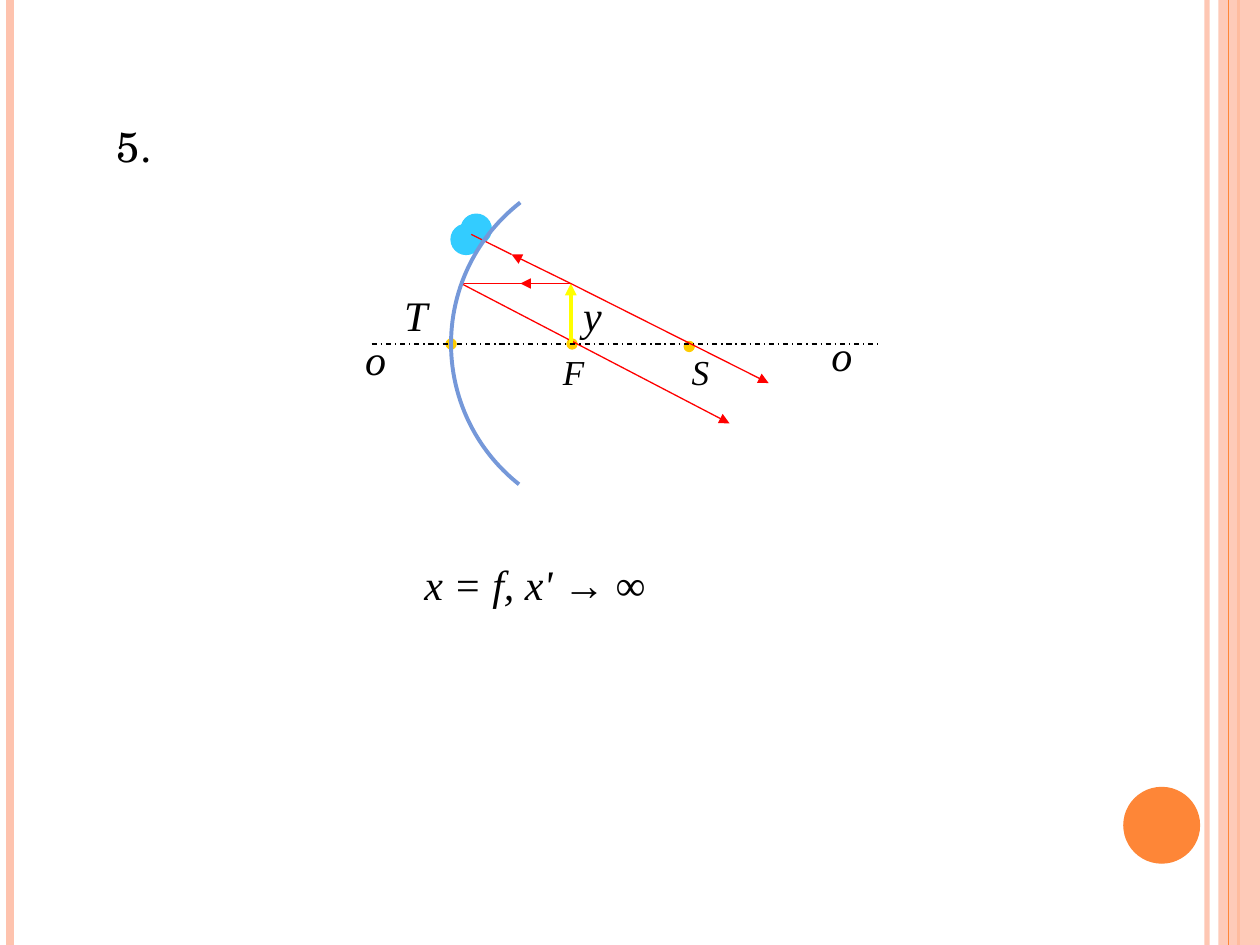
from typing import NamedTuple, Optional

from lxml import etree
from pptx import Presentation
from pptx.dml.color import RGBColor
from pptx.enum.dml import MSO_LINE
from pptx.enum.shapes import MSO_CONNECTOR, MSO_SHAPE
from pptx.enum.text import MSO_ANCHOR, MSO_AUTO_SIZE
from pptx.oxml.ns import qn
from pptx.util import Inches, Pt

STRAIGHT = MSO_CONNECTOR.STRAIGHT
RECT, OVAL, ARC = MSO_SHAPE.RECTANGLE, MSO_SHAPE.OVAL, MSO_SHAPE.ARC
DASH_DOT = MSO_LINE.DASH_DOT
TOP, MIDDLE = MSO_ANCHOR.TOP, MSO_ANCHOR.MIDDLE
GROW = MSO_AUTO_SIZE.SHAPE_TO_FIT_TEXT

PEACH = RGBColor(0xFE, 0xC3, 0xAE)
ORANGE = RGBColor(0xFE, 0x86, 0x37)
GOLD = RGBColor(0xFF, 0xCC, 0x00)
RED = RGBColor(0xFF, 0x00, 0x00)
YELLOW = RGBColor(0xFF, 0xFF, 0x00)
CYAN = RGBColor(0x33, 0xCC, 0xFF)
BLUE = RGBColor(0x75, 0x98, 0xD9)
BLACK = RGBColor(0x00, 0x00, 0x00)

SERIF, SCHOOL = "Times New Roman", "TeX Gyre Schola"
SLIDE_W, SLIDE_H = 10, 7.5
AXIS_Y = 2.73
MIRROR_X, CENTRE_X = 3.58, 5.0
OBJECT_TOP = (4.53, 2.25)
MIRROR_HIT = (3.66, 2.25)


class Line(NamedTuple):
    start: tuple[float, float]
    end: tuple[float, float]
    color: RGBColor
    width: float = 0.75
    arrow: bool = False
    dash: Optional[MSO_LINE] = None
    alpha: int = 100


class Disc(NamedTuple):
    x: float
    y: float
    size: float
    color: RGBColor


class Label(NamedTuple):
    text: str
    x: float
    y: float
    w: float
    h: float = 0.5
    size: int = 24
    font: str = SERIF
    italic: bool = True
    anchor: MSO_ANCHOR = TOP


def vertical(x: float, color: RGBColor, width: float, alpha: int = 100) -> Line:
    return Line((x, 0), (x, SLIDE_H), color, width, alpha=alpha)


BORDERS = [vertical(9.58, PEACH, 3, 93), vertical(0.08, PEACH, 4.5),
           vertical(9.83, ORANGE, 1.5)]
INNER_BORDER = vertical(9.75, ORANGE, 0.75)
CORNER_DISC = Disc(9.22, 6.55, 0.6, ORANGE)

POINTS = [Disc(MIRROR_X, AXIS_Y, 0.08, GOLD), Disc(4.54, AXIS_Y, 0.08, GOLD),
          Disc(5.47, 2.75, 0.08, GOLD)]
CLOUD = [Disc(3.7, 1.9, 0.24, CYAN), Disc(3.78, 1.82, 0.24, CYAN)]
LINES = [
    Line(OBJECT_TOP, (4.13, 2.25), RED, arrow=True),
    Line((4.21, 2.25), MIRROR_HIT, RED),
    Line(MIRROR_HIT, (5.79, 3.36), RED, arrow=True),
    Line((4.53, 2.72), OBJECT_TOP, YELLOW, 2.25, arrow=True),
    Line((2.95, AXIS_Y), (6.97, AXIS_Y), BLACK, dash=DASH_DOT),
    Line(OBJECT_TOP, (6.1, 3.04), RED, arrow=True),
    Line(OBJECT_TOP, (4.06, 2.02), RED, arrow=True),
    Line((4.06, 2.02), (3.74, 1.86), RED),
]
LABELS = [
    Label("o", 2.8, 2.6, 0.37),
    Label("o", 6.5, 2.57, 0.37),
    Label("F", 4.37, AXIS_Y, 0.37, 0.43, 20),
    Label("S", 5.39, AXIS_Y, 0.34, 0.43, 20),
    Label("T", 3.11, 2.25, 0.39),
    Label("y", 4.53, 2.25, 0.35),
    Label("5.", 0.83, 0.91, 0.57, font=SCHOOL, italic=False),
]
FORMULA = Label("x = f, x' ", 3.27, 4.38, 2.1, anchor=MIDDLE)


def set_alpha(sp_pr, percent: int) -> None:
    color = next(sp_pr.iter(qn("a:srgbClr")))
    etree.SubElement(color, qn("a:alpha")).set("val", str(percent * 1000))


def add_line(s, line: Line) -> None:
    ends = [Inches(v) for v in (*line.start, *line.end)]
    cx = s.shapes.add_connector(STRAIGHT, *ends)
    cx.line.color.rgb = line.color
    cx.line.width = Pt(line.width)
    if line.dash is not None:
        cx.line.dash_style = line.dash
    sp_pr = cx._element.spPr
    if line.alpha < 100:
        set_alpha(sp_pr, line.alpha)
    if line.arrow:
        ln = sp_pr.find(qn("a:ln"))
        etree.SubElement(ln, qn("a:tailEnd")).set("type", "triangle")
    etree.SubElement(sp_pr, qn("a:effectLst"))


def add_shape(s, kind: MSO_SHAPE, x: float, y: float, w: float, h: float):
    sp = s.shapes.add_shape(kind, Inches(x), Inches(y), Inches(w), Inches(h))
    sp.shadow.inherit = False
    return sp


def add_disc(s, disc: Disc) -> None:
    half = disc.size / 2
    sp = add_shape(s, OVAL, disc.x - half, disc.y - half, disc.size, disc.size)
    sp.fill.solid()
    sp.fill.fore_color.rgb = disc.color
    sp.line.color.rgb = disc.color
    sp.line.width = Pt(0.75)


def add_band(s) -> None:
    sp = add_shape(s, RECT, 9.67, 0, 0.33, SLIDE_H)
    sp.fill.solid()
    sp.fill.fore_color.rgb = PEACH
    sp.line.fill.background()
    set_alpha(sp._element.spPr, 87)


def add_mirror(s) -> None:
    radius = CENTRE_X - MIRROR_X
    sp = add_shape(s, ARC, MIRROR_X, AXIS_Y - radius, 2 * radius, 2 * radius)
    for i, degrees in enumerate((128.3, 232.2)):
        sp.adjustments[i] = degrees * 0.6  # 60000ths of a degree over 100000
    sp.fill.background()
    sp.line.color.rgb = BLUE
    sp.line.width = Pt(2.25)


def format_run(r, label: Label, italic: bool) -> None:
    r.font.name = label.font
    r.font.size = Pt(label.size)
    r.font.italic = italic
    r.font.color.rgb = BLACK


def add_label(s, label: Label):
    box = [Inches(v) for v in (label.x, label.y, label.w, label.h)]
    tf = s.shapes.add_textbox(*box).text_frame
    tf.text = label.text
    tf.word_wrap = False
    tf.auto_size = GROW
    tf.vertical_anchor = label.anchor
    p = tf.paragraphs[0]
    format_run(p.runs[0], label, label.italic)
    return p


def main() -> None:
    prs = Presentation()
    prs.slide_width, prs.slide_height = Inches(SLIDE_W), Inches(SLIDE_H)
    s = prs.slides.add_slide(prs.slide_layouts[6])

    for border in BORDERS:
        add_line(s, border)
    add_band(s)
    add_line(s, INNER_BORDER)
    for disc in [CORNER_DISC, *POINTS, *CLOUD]:
        add_disc(s, disc)
    for line in LINES:
        add_line(s, line)
    add_mirror(s)
    for label in LABELS:
        add_label(s, label)
    limit = add_label(s, FORMULA).add_run()
    limit.text = "→ ∞"
    format_run(limit, FORMULA, italic=False)

    prs.save("out.pptx")


if __name__ == "__main__":
    main()
